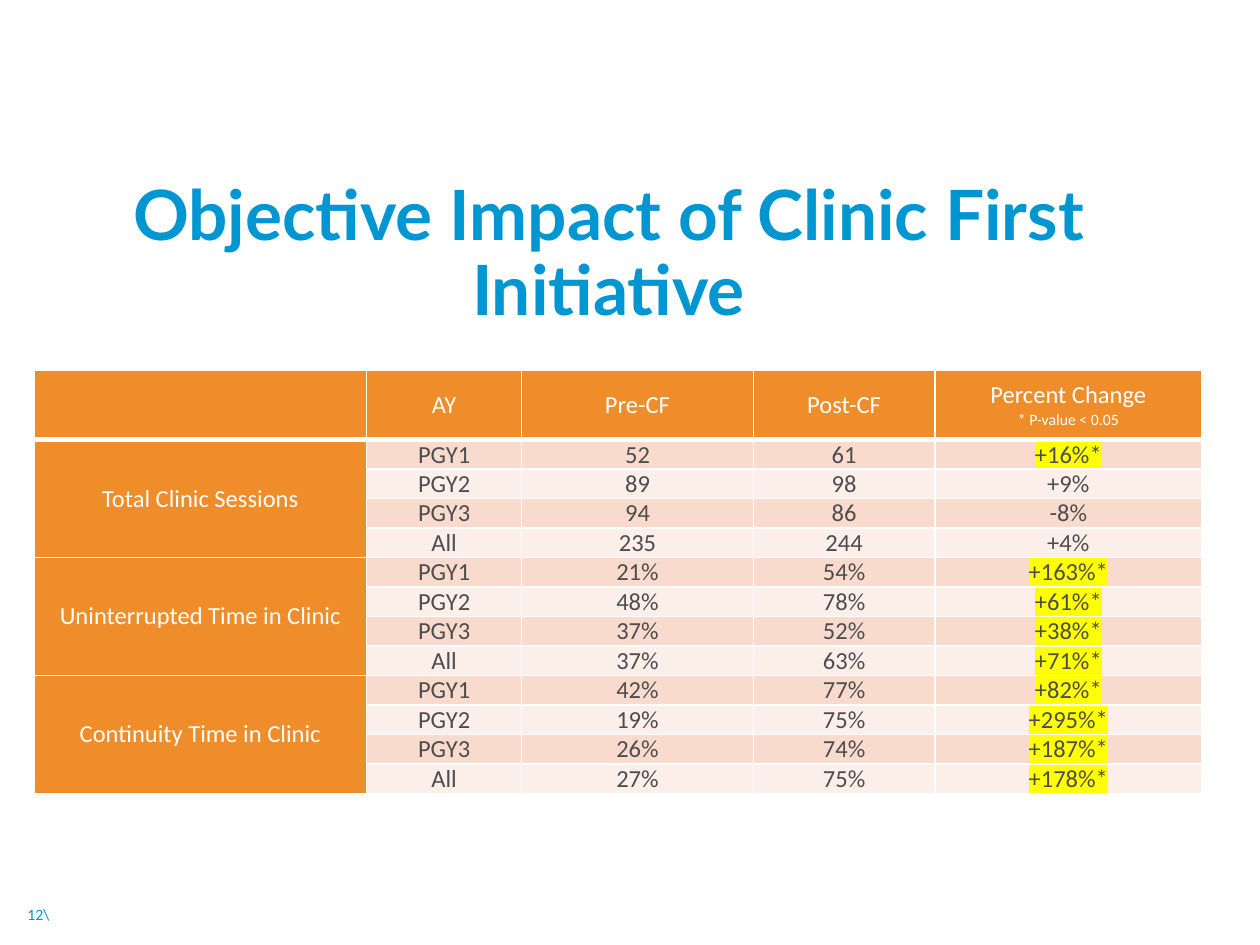
"""Build the slide on the objective impact of the Clinic First initiative."""
from dataclasses import dataclass

import lxml.etree
import pptx
import pptx.dml.color
import pptx.enum.text
import pptx.oxml.ns
import pptx.table
import pptx.text.text
import pptx.util

Inches = pptx.util.Inches
Align = pptx.enum.text.PP_ALIGN
Anchor = pptx.enum.text.MSO_ANCHOR


@dataclass(frozen=True)
class Theme:
    """Colours, fonts and type sizes of the slide."""

    blue: str = "0096D2"
    orange: str = "EF8D2B"
    bands: tuple[str, str] = ("F9DBCD", "FCEEE8")
    white: str = "FFFFFF"
    grey: str = "4D4D4F"
    yellow: str = "FFFF00"
    title_font: str = "Lato"
    body_font: str = "Calibri"
    title_size: float = 39.6
    body_size: float = 14
    small_size: float = 9


@dataclass(frozen=True)
class Result:
    """One training year before and after the initiative."""

    year: str
    before: str
    after: str
    change: str


@dataclass(frozen=True)
class Measure:
    """A measured outcome with its results by year."""

    label: str
    results: tuple[Result, ...]


THEME = Theme()
HEADINGS = ("", "AY", "Pre-CF", "Post-CF", "Percent Change\n* P-value < 0.05")
COLUMN_WIDTHS = (2.64, 1.23, 1.84, 1.44, 2.12)
HEADING_HEIGHT = 0.55
TABLE_HEIGHT = 3.35
MEASURES = (
    Measure("Total Clinic Sessions", (
        Result("PGY1", "52", "61", "+16%*"),
        Result("PGY2", "89", "98", "+9%"),
        Result("PGY3", "94", "86", "-8%"),
        Result("All", "235", "244", "+4%"),
    )),
    Measure("Uninterrupted Time in Clinic", (
        Result("PGY1", "21%", "54%", "+163%*"),
        Result("PGY2", "48%", "78%", "+61%*"),
        Result("PGY3", "37%", "52%", "+38%*"),
        Result("All", "37%", "63%", "+71%*"),
    )),
    Measure("Continuity Time in Clinic", (
        Result("PGY1", "42%", "77%", "+82%*"),
        Result("PGY2", "19%", "75%", "+295%*"),
        Result("PGY3", "26%", "74%", "+187%*"),
        Result("All", "27%", "75%", "+178%*"),
    )),
)


def rgb(color: str) -> pptx.dml.color.RGBColor:
    """Turn a hex string into a colour."""
    return pptx.dml.color.RGBColor.from_string(color)


def add_element(parent: lxml.etree._Element, tag: str, **attributes: str) -> lxml.etree._Element:
    """Append a drawing element to its parent."""
    return lxml.etree.SubElement(parent, pptx.oxml.ns.qn(tag), attributes)


def style_paragraph(paragraph: pptx.text.text._Paragraph, align: Align, size: float, color: str,
                    family: str = THEME.body_font, bold: bool = False) -> None:
    """Set the alignment and font of a paragraph."""
    paragraph.alignment = align
    font = paragraph.font
    font.size, font.name, font.bold = pptx.util.Pt(size), family, bold
    font.color.rgb = rgb(color)


def fill_cell(cell: pptx.table._Cell, text: str, fill: str, color: str,
              anchor: Anchor = Anchor.MIDDLE, bottom_width: float = 1) -> None:
    """Write a cell with white borders, highlighting significant values."""
    cell.text = text
    cell.vertical_anchor = anchor
    cell.margin_left = cell.margin_right = Inches(0.05)
    cell.margin_top = cell.margin_bottom = 0
    for paragraph in cell.text_frame.paragraphs:
        size = THEME.small_size if paragraph.text.startswith("*") else THEME.body_size
        style_paragraph(paragraph, Align.CENTER, size, color)
    if text.endswith("*"):
        properties = cell.text_frame.paragraphs[0].runs[0]._r.get_or_add_rPr()
        highlight = add_element(properties, "a:highlight")
        add_element(highlight, "a:srgbClr", val=THEME.yellow)
    borders = cell._tc.get_or_add_tcPr()
    for side, width in (("L", 1), ("R", 1), ("T", 1), ("B", bottom_width)):
        line = add_element(borders, f"a:ln{side}", w=str(pptx.util.Pt(width)))
        add_element(add_element(line, "a:solidFill"), "a:srgbClr", val=THEME.white)
    cell.fill.solid()
    cell.fill.fore_color.rgb = rgb(fill)


def fill_measure(table: pptx.table.Table, top: int, measure: Measure) -> None:
    """Write a measure label beside its banded results."""
    bottom = top + len(measure.results) - 1
    table.cell(top, 0).merge(table.cell(bottom, 0))
    for row, result in enumerate(measure.results, top):
        label = measure.label if row == top else ""
        fill_cell(table.cell(row, 0), label, THEME.orange, THEME.white)
        band = THEME.bands[(row - 1) % 2]
        values = (result.year, result.before, result.after, result.change)
        for column, value in enumerate(values, 1):
            fill_cell(table.cell(row, column), value, band, THEME.grey, Anchor.BOTTOM)


def add_results(slide: pptx.slide.Slide) -> None:
    """Add the table of all measures."""
    result_count = sum(len(measure.results) for measure in MEASURES)
    table = slide.shapes.add_table(
        result_count + 1, len(HEADINGS), Inches(0.27), Inches(2.94),
        Inches(sum(COLUMN_WIDTHS)), Inches(TABLE_HEIGHT)).table
    table.first_row = table.horz_banding = False
    for column, width in zip(table.columns, COLUMN_WIDTHS):
        column.width = Inches(width)
    for row in table.rows:
        row.height = Inches((TABLE_HEIGHT - HEADING_HEIGHT) / result_count)
    table.rows[0].height = Inches(HEADING_HEIGHT)
    for column, heading in enumerate(HEADINGS):
        fill_cell(table.cell(0, column), heading, THEME.orange, THEME.white, bottom_width=3)
    top = 1
    for measure in MEASURES:
        fill_measure(table, top, measure)
        top += len(measure.results)


def add_title(slide: pptx.slide.Slide) -> None:
    """Place and format the slide title."""
    title = slide.shapes.title
    title.left, title.top = Inches(0.95), Inches(1.74)
    title.width, title.height = Inches(7.76), Inches(0.58)
    frame = title.text_frame
    frame.text = "Objective Impact of Clinic First Initiative"
    frame.word_wrap = True
    frame.auto_size = pptx.enum.text.MSO_AUTO_SIZE.NONE
    frame.vertical_anchor = Anchor.MIDDLE
    heading = frame.paragraphs[0]
    heading.line_spacing = 0.9
    style_paragraph(heading, Align.CENTER, THEME.title_size, THEME.blue, THEME.title_font, True)


def add_page_number(slide: pptx.slide.Slide) -> None:
    """Add the page number at the lower left."""
    frame = slide.shapes.add_textbox(0, Inches(7.11), Inches(0.49), Inches(0.3)).text_frame
    frame.text = "12\\"
    frame.word_wrap = True
    frame.vertical_anchor = Anchor.MIDDLE
    style_paragraph(frame.paragraphs[0], Align.RIGHT, THEME.small_size, THEME.blue)


def main() -> None:
    """Build and save the presentation."""
    presentation = pptx.Presentation()
    presentation.slide_width, presentation.slide_height = Inches(10), Inches(7.5)
    slide = presentation.slides.add_slide(presentation.slide_layouts[5])
    add_page_number(slide)
    add_title(slide)
    add_results(slide)
    presentation.save("out.pptx")


if __name__ == "__main__":
    main()
